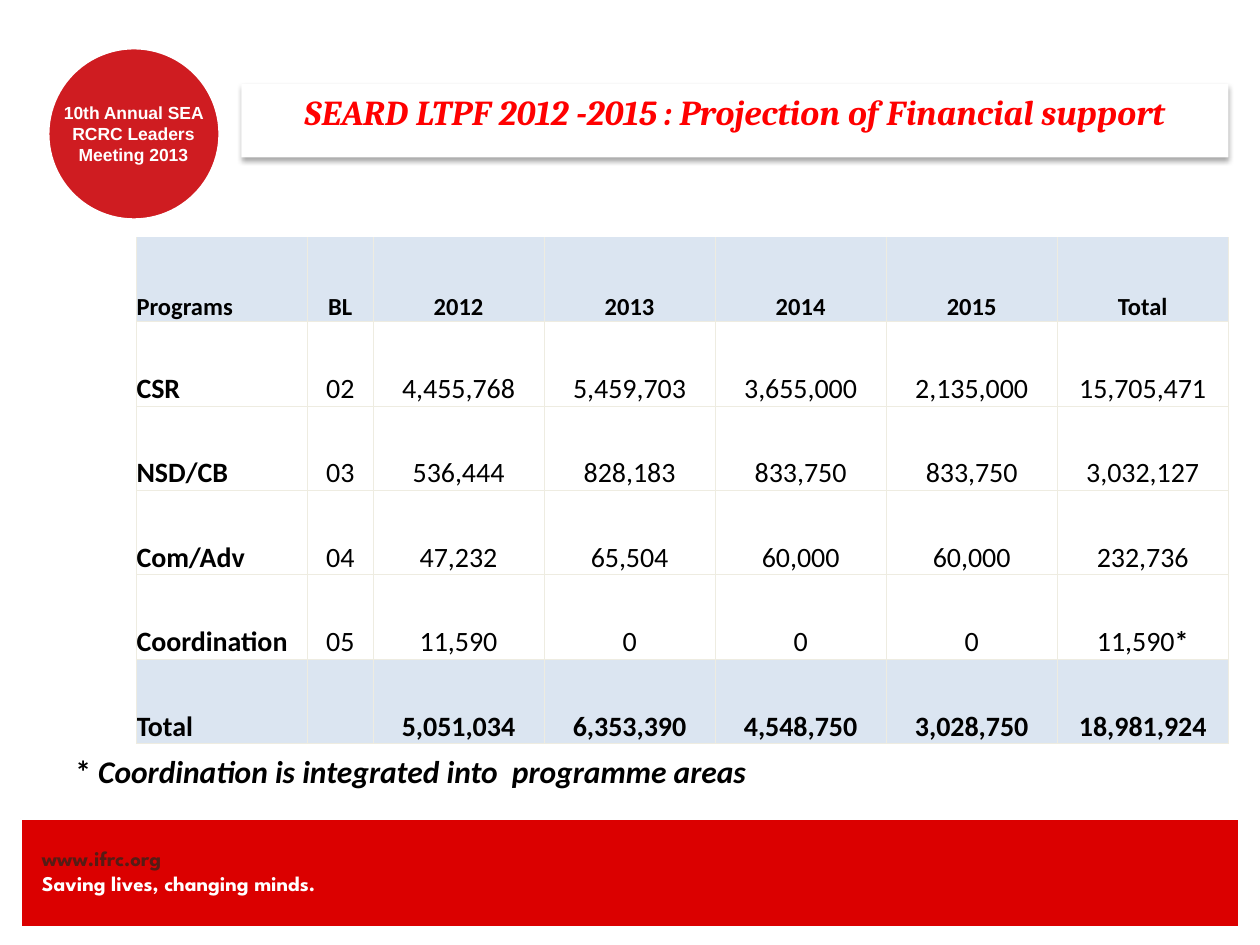
from lxml import etree
from pptx import Presentation, util as u
from pptx.dml.color import RGBColor
from pptx.enum import shapes, text
from pptx.oxml import parse_xml
from pptx.oxml.ns import nsdecls, qn

COLUMNS, ROWS = 120, 90
UNIT = u.Inches(1) // 12
RED, BADGE_RED, WHITE, BLACK = "DB0000", "CF1C21", "FFFFFF", "000000"
BAND, GRID_LINE = "DBE5F1", "EEECE1"

HEADER = ["Programs", "BL", "2012", "2013", "2014", "2015", "Total"]
PROGRAMS = [
    ["CSR", "02", "4,455,768", "5,459,703", "3,655,000", "2,135,000", "15,705,471"],
    ["NSD/CB", "03", "536,444", "828,183", "833,750", "833,750", "3,032,127"],
    ["Com/Adv", "04", "47,232", "65,504", "60,000", "60,000", "232,736"],
    ["Coordination", "05", "11,590", "0", "0", "0", "11,590*"],
]
TOTALS = ["Total", "", "5,051,034", "6,353,390", "4,548,750", "3,028,750", "18,981,924"]


def color(value):
    """Turn a hex string into a colour."""
    return RGBColor.from_string(value)


def place(box, left=0, top=0, width=None, height=None):
    """Give the position in EMU of a part measured in grid units from its box."""
    units = box[0] + left, box[1] + top, width or box[2], height or box[3]
    return [round(value * UNIT) for value in units]


def style(run, name, size, value, bold=True, italic=False):
    """Set the font of a run."""
    font = run.font
    font.name, font.size, font.bold, font.italic = name, u.Pt(size), bold, italic
    font.color.rgb = color(value)


def add_block(slide, kind, position, fill, line=None, width=0):
    """Add a filled shape without shadow."""
    shape = slide.shapes.add_shape(kind, *position)
    shape.shadow.inherit = False
    shape.fill.solid()
    shape.fill.fore_color.rgb = color(fill)
    if line:
        shape.line.color.rgb = color(line)
        shape.line.width = u.Pt(width)
    else:
        shape.line.fill.background()
    return shape


def add_label(slide, position, margin=None):
    """Add a wrapping text box and return its text frame."""
    frame = slide.shapes.add_textbox(*position).text_frame
    frame.word_wrap = True
    if margin is not None:
        frame.margin_left = frame.margin_right = margin
        frame.margin_top = frame.margin_bottom = margin
    return frame


def add_footer(slide, box):
    """Draw the red band with the address and the motto."""
    add_block(slide, shapes.MSO_SHAPE.RECTANGLE, place(box), RED, WHITE, 0.75)
    frame = add_label(slide, place(box, 2, 2.5, 41, 4.8), 0)
    frame.text = "www.ifrc.org\nSaving lives, changing minds."
    for paragraph, value in zip(frame.paragraphs, ("551C15", WHITE)):
        style(paragraph.runs[0], "League Spartan", 12, value)


def add_badge(slide, box):
    """Draw the round meeting badge."""
    add_block(slide, shapes.MSO_SHAPE.OVAL, place(box), BADGE_RED, WHITE, 2.5)
    frame = add_label(slide, place(box, 0.7, 5.2, 15, 6), 0)
    frame.text = "10th Annual SEA RCRC Leaders Meeting 2013"
    paragraph = frame.paragraphs[0]
    paragraph.alignment = text.PP_ALIGN.CENTER
    style(paragraph.runs[0], "Arial", 10, WHITE)


def add_title(slide, box):
    """Draw the title on a white plate with a soft shadow."""
    shape = add_block(slide, shapes.MSO_SHAPE.RECTANGLE, place(box), WHITE)
    effects = shape._element.spPr.find(qn("a:effectLst"))
    effects.append(parse_xml(
        f'<a:outerShdw {nsdecls("a")} blurRad="{u.Pt(3.1)}" dist="{u.Pt(1.8)}" '
        f'dir="5400000" rotWithShape="0"><a:srgbClr val="{BLACK}">'
        '<a:alpha val="35000"/></a:srgbClr></a:outerShdw>'))
    frame = shape.text_frame
    frame.vertical_anchor = text.MSO_ANCHOR.TOP
    frame.text = "SEARD LTPF 2012 -2015 : Projection of Financial support"
    paragraph = frame.paragraphs[0]
    paragraph.alignment = text.PP_ALIGN.CENTER
    style(paragraph.runs[0], "Cambria", 20, "FF0000", italic=True)


def set_borders(cell, sides):
    """Draw thin lines on the named sides of a cell and none on the others."""
    properties = cell._tc.get_or_add_tcPr()
    for side in "LRTB":
        line = etree.SubElement(properties, qn(f"a:ln{side}"), w=str(u.Pt(0.5)))
        if side in sides:
            fill = etree.SubElement(line, qn("a:solidFill"))
            etree.SubElement(fill, qn("a:srgbClr"), val=GRID_LINE)
        else:
            etree.SubElement(line, qn("a:noFill"))


def fill_cell(cell, words, size, bold, centred):
    """Write a cell, with any asterisk in bold."""
    cell.vertical_anchor = text.MSO_ANCHOR.BOTTOM
    cell.margin_left = cell.margin_right = cell.margin_top = cell.margin_bottom = 0
    paragraph = cell.text_frame.paragraphs[0]
    if centred:
        paragraph.alignment = text.PP_ALIGN.CENTER
    number, mark, _ = words.partition("*")
    for part in filter(None, (number, mark)):
        run = paragraph.add_run()
        run.text = part
        style(run, "Calibri", size, BLACK, bold or part == "*")


def add_projection(slide, box):
    """Draw the table of support by programme and year under an empty row."""
    lines = [HEADER, *PROGRAMS, TOTALS]
    table = slide.shapes.add_table(len(lines) + 1, len(HEADER), *place(box)).table
    table.first_row = table.horz_banding = False
    narrow = 0.06
    wide = (1 - narrow) / (len(HEADER) - 1)
    for index, column in enumerate(table.columns):
        column.width = round(box[2] * UNIT * (narrow if index == 1 else wide))
    for index, row in enumerate(table.rows):
        row.height = round(UNIT * (8.04 if index else 6.6))
    for cell in table.rows[0].cells:
        set_borders(cell, "")
        cell.fill.background()
    table.cell(0, 0).merge(table.cell(0, len(HEADER) - 1))
    for row, values in enumerate(lines, 1):
        banded = values in (HEADER, TOTALS)
        for column, words in enumerate(values):
            cell = table.cell(row, column)
            set_borders(cell, "LRB" if row == 1 else "LRTB")
            if banded:
                cell.fill.solid()
                cell.fill.fore_color.rgb = color(BAND)
            else:
                cell.fill.background()
            fill_cell(cell, words, 14 if row == 1 else 16, banded or column == 0, column > 0)


def add_note(slide, box):
    """Write the remark under the table."""
    paragraph = add_label(slide, place(box)).paragraphs[0]
    for words, italic in (("* ", False), ("Coordination is integrated into  programme areas", True)):
        run = paragraph.add_run()
        run.text = words
        style(run, "Calibri", 18, BLACK, italic=italic)


def main():
    """Build and save the slide."""
    presentation = Presentation()
    presentation.slide_width, presentation.slide_height = COLUMNS * UNIT, ROWS * UNIT
    slide = presentation.slides.add_slide(presentation.slide_layouts[6])
    add_footer(slide, (2, 78, 116, 10.3))
    add_badge(slide, (4.5, 4.5, 16.5, 16.5))
    add_title(slide, (23, 8, 94, 7))
    add_projection(slide, (13, 16, 104, 54.84))
    add_note(slide, (6, 71, 110, 4.8))
    presentation.save("out.pptx")


if __name__ == "__main__":
    main()
